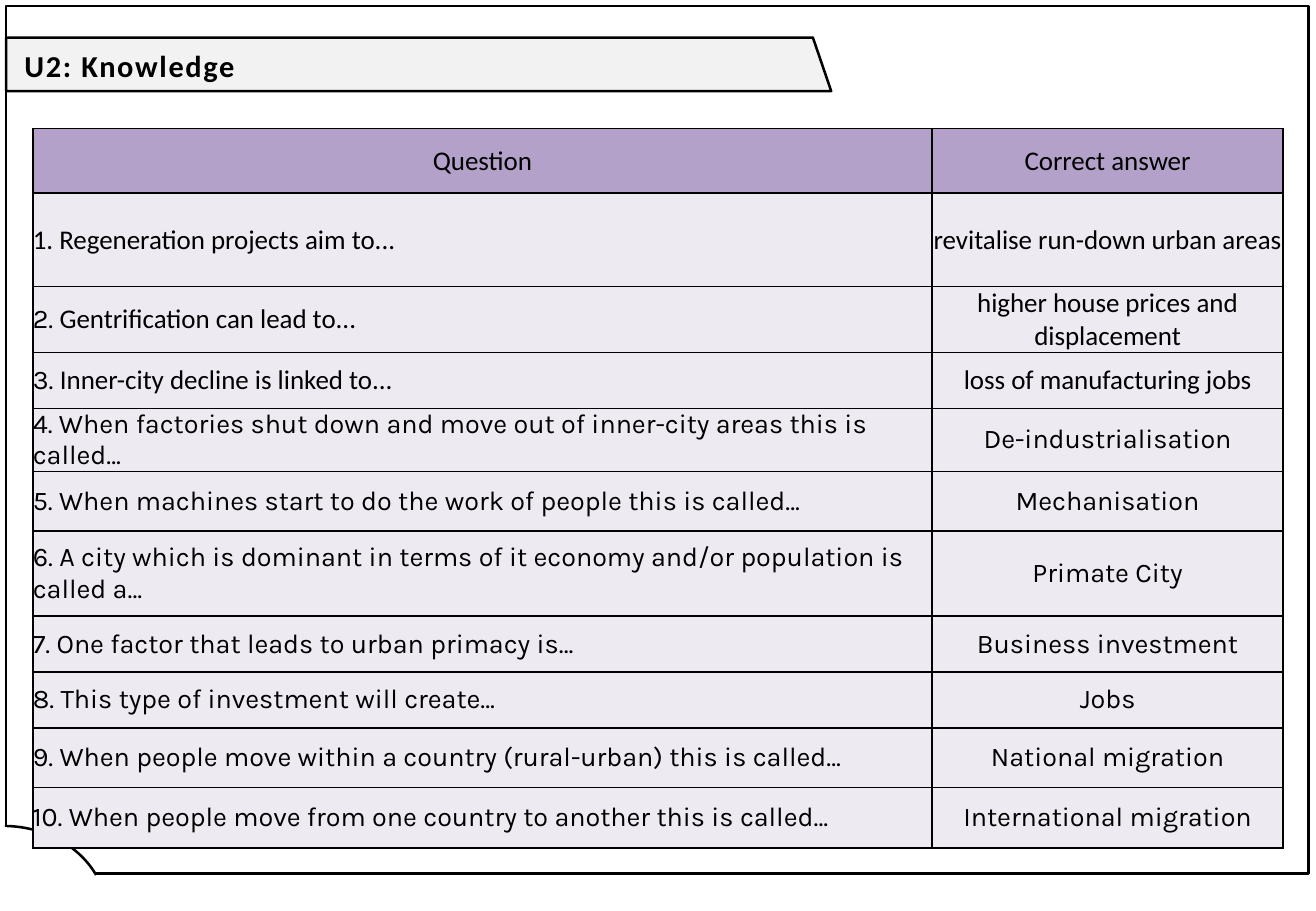
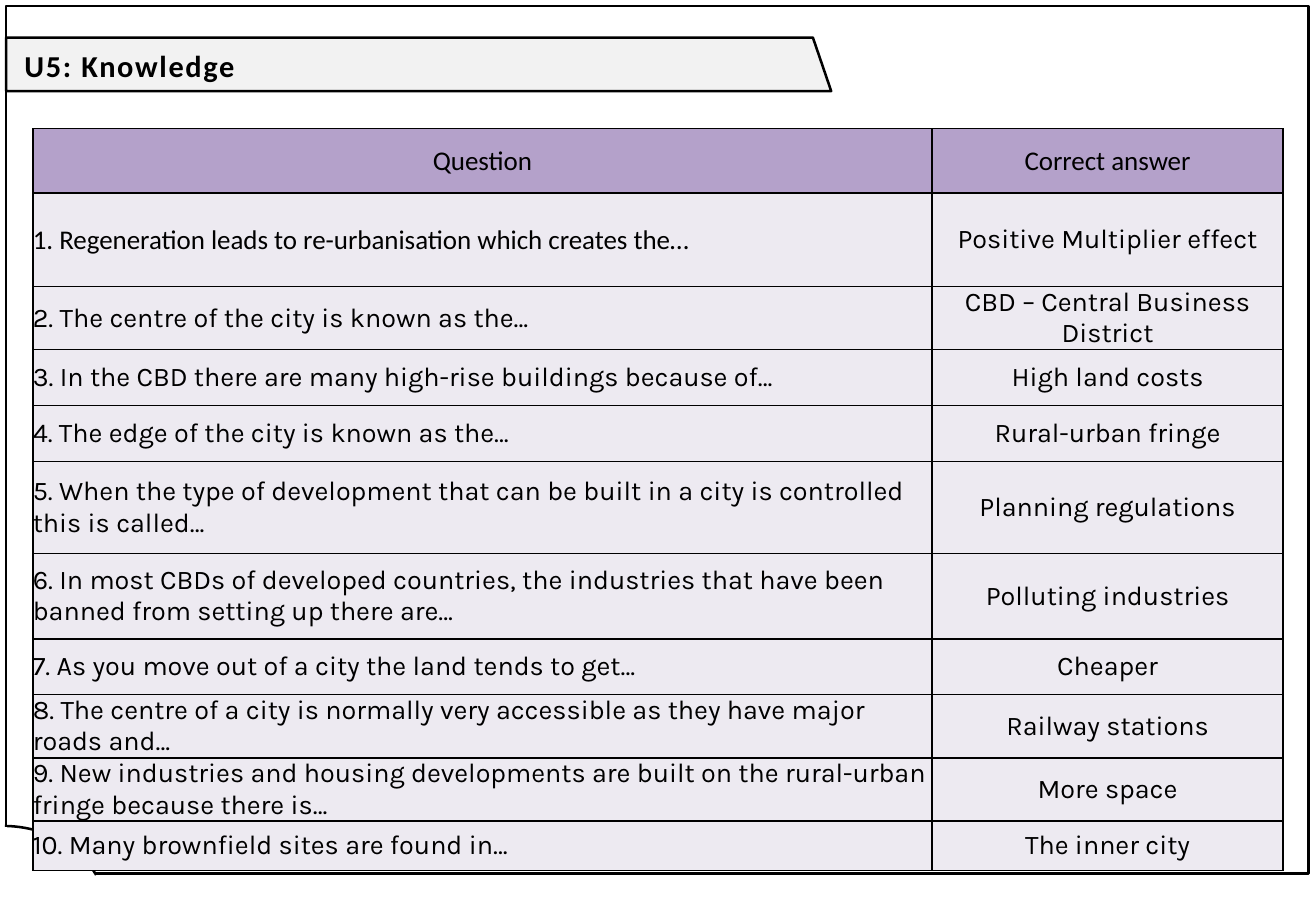
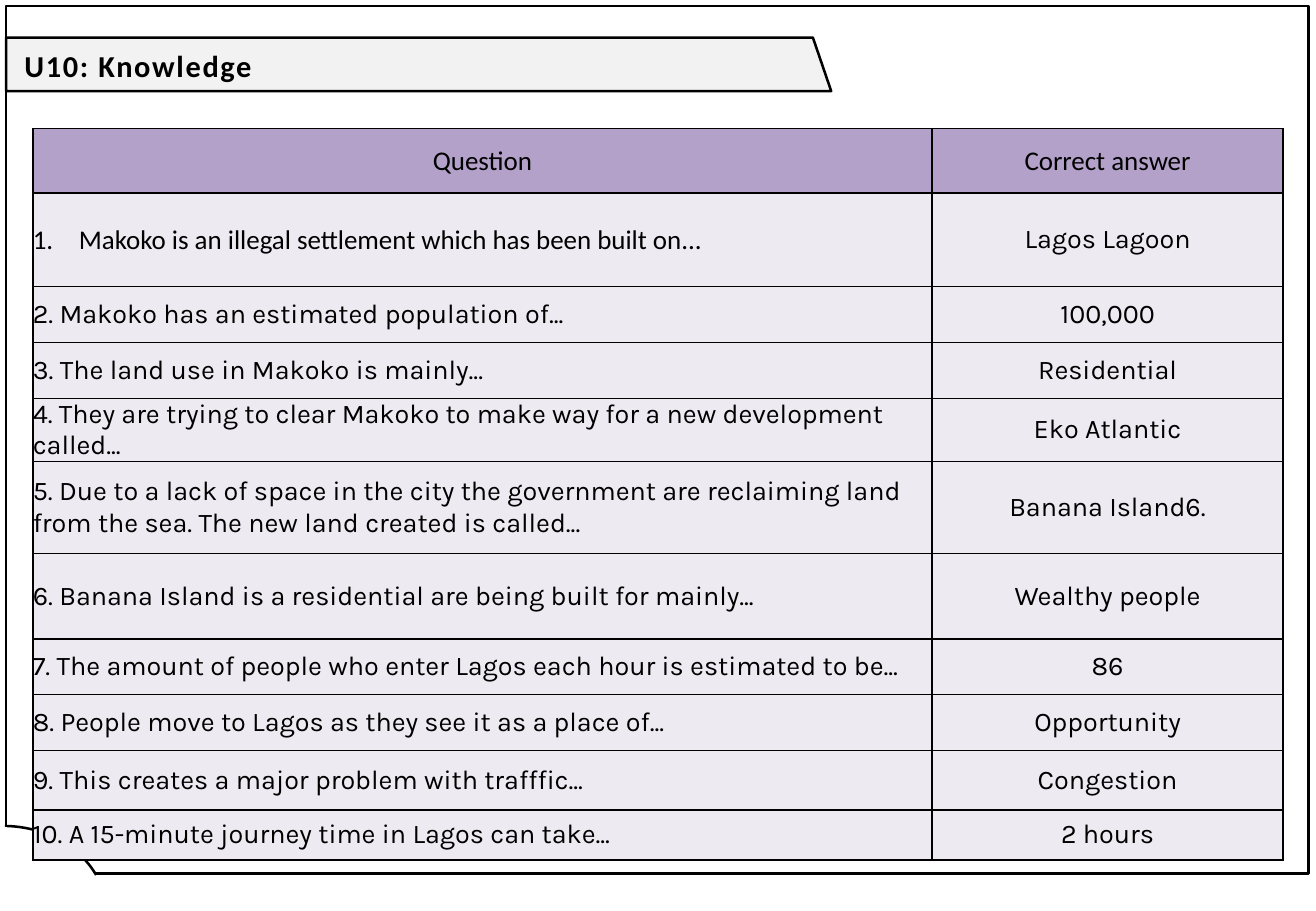
from dataclasses import dataclass

from pptx import Presentation
from pptx.dml.color import RGBColor
from pptx.enum.shapes import MSO_SHAPE as Preset
from pptx.enum.text import MSO_ANCHOR as Anchor, MSO_AUTO_SIZE as AutoSize, PP_ALIGN as Align
from pptx.oxml import parse_xml
from pptx.oxml.ns import nsdecls
from pptx.util import Pt

EMU_PER_PX = 9144  # 100 px to the inch
BLACK, WHITE = "000000", "FFFFFF"
BAND_GREY, HEADER_PURPLE, ROW_LILAC = "F2F2F2", "B4A1CA", "EDEAF1"
HEADING_FONT, BODY_FONT = "Calibri", "Karla"
COLUMN_WIDTHS = (740, 289)
ROWS_WITH_SHORT_FIFTH = (53, 77, 46, 46, 46, 49, 70, 46, 46, 49, 50)
ROWS_WITH_TALL_FIFTH = (53, 77, 46, 46, 46, 76, 70, 46, 46, 49, 41)


@dataclass
class Entry:
    """Cell text, with an optional lead-in set in the body font."""
    text: str
    font: str = BODY_FONT
    lead: str = ""
    numbered: bool = False


def heading(text, lead="", numbered=False):
    """Make a cell entry in the heading font."""
    return Entry(text, HEADING_FONT, lead, numbered)


HEADER = (heading("Question"), heading("Correct answer"))

REGENERATION = [
    (heading("1. Regeneration projects aim to..."), heading("revitalise run-down urban areas")),
    (heading("Gentrification can lead to...", lead="2. "),
     heading("higher house prices and displacement")),
    (heading("Inner-city decline is linked to...", lead="3. "),
     heading("loss of manufacturing jobs")),
    ("4. When factories shut down and move out of inner-city areas this is called…",
     "De-industrialisation"),
    ("5. When machines start to do the work of people this is called…", "Mechanisation"),
    ("6. A city which is dominant in terms of it economy and/or population is called a…",
     "Primate City"),
    ("7. One factor that leads to urban primacy is…", "Business investment"),
    ("8. This type of investment will create…", "Jobs"),
    ("9. When people move within a country (rural-urban) this is called…", "National migration"),
    ("10. When people move from one country to another this is called…",
     "International migration"),
]

LAND_USE = [
    (heading("1. Regeneration leads to re-urbanisation which creates the…"),
     "Positive Multiplier effect"),
    ("2. The centre of the city is known as the…", "CBD – Central Business District"),
    ("3. In the CBD there are many high-rise buildings because of…", "High land costs"),
    ("4. The edge of the city is known as the…", "Rural-urban fringe"),
    ("5. When the type of development that can be built in a city is controlled this is called…",
     "Planning regulations"),
    ("6. In most CBDs of developed countries, the industries that have been banned "
     "from setting up there are…", "Polluting industries"),
    ("7. As you move out of a city the land tends to get…", "Cheaper"),
    ("8. The centre of a city is normally very accessible as they have major roads and…",
     "Railway stations"),
    ("9. New industries and housing developments are built on the rural-urban fringe "
     "because there is…", "More space"),
    ("10. Many brownfield sites are found in…", "The inner city"),
]

LAGOS = [
    (heading("Makoko is an illegal settlement which has been built on...", numbered=True),
     "Lagos Lagoon"),
    ("2. Makoko has an estimated population of...", "100,000"),
    ("3. The land use in Makoko is mainly...", "Residential"),
    ("4. They are trying to clear Makoko to make way for a new development called...",
     "Eko Atlantic"),
    ("5. Due to a lack of space in the city the government are reclaiming land from the sea. "
     "The new land created is called...", "Banana Island6."),
    ("6. Banana Island is a residential are being built for mainly...", "Wealthy people"),
    ("7. The amount of people who enter Lagos each hour is estimated to be...", "86"),
    ("8. People move to Lagos as they see it as a place of...", "Opportunity"),
    ("9. This creates a major problem with trafffic...", "Congestion"),
    ("10. A 15-minute journey time in Lagos can take...", "2 hours"),
]

PAGES = [
    ("U2: Knowledge", ROWS_WITH_SHORT_FIFTH, REGENERATION),
    ("U5: Knowledge", ROWS_WITH_TALL_FIFTH, LAND_USE),
    ("U10: Knowledge", ROWS_WITH_TALL_FIFTH, LAGOS),
]


def px(*lengths):
    return [length * EMU_PER_PX for length in lengths]


def rgb(hex_colour):
    return RGBColor.from_string(hex_colour)


def style_shape(shape, fill=None, line=None):
    shape.shadow.inherit = False
    if fill:
        shape.fill.solid()
        shape.fill.fore_color.rgb = rgb(fill)
    else:
        shape.fill.background()
    if line:
        shape.line.color.rgb = rgb(line)
        shape.line.width = Pt(1.5)
    else:
        shape.line.fill.background()
    return shape


def style_font(font, name, size):
    font.name = name
    font.size = Pt(size)
    font.color.rgb = rgb(BLACK)


def prepare_layout(layout):
    """Keep only the title placeholder and place it on the title band."""
    for holder in list(layout.placeholders):
        if holder.placeholder_format.idx:
            holder.element.getparent().remove(holder.element)
    title = layout.placeholders[0]
    title.left, title.top, title.width, title.height = px(10, 21, 643, 63)


def draw_backdrop(page, layout):
    """Draw the band, frame and turned corner, then hand them to the layout."""
    outline = page.shapes.build_freeform(5, 31, scale=EMU_PER_PX)
    outline.add_line_segments([(669, 31), (684, 75), (5, 75)], close=True)
    band = style_shape(outline.convert_to_shape(), BAND_GREY, BLACK)
    frame = style_shape(page.shapes.add_shape(Preset.RECTANGLE, *px(5, 5, 1072, 714)), line=BLACK)
    corner = style_shape(page.shapes.add_shape(Preset.ARC, *px(-82, 680, 170, 145)), WHITE, BLACK)
    corner.adjustments[0], corner.adjustments[1] = 162.53, 202.27
    patch = style_shape(page.shapes.add_shape(Preset.RECTANGLE, *px(1, 681, 5, 10)), WHITE)
    for shape in (band, frame, corner, patch):
        layout.shapes.element.append(shape.element)


def set_title(page, text):
    frame = page.shapes.title.text_frame
    frame.text = text
    frame.word_wrap = True
    frame.auto_size = AutoSize.NONE
    frame.vertical_anchor = Anchor.MIDDLE
    para = frame.paragraphs[0]
    para.alignment = Align.LEFT
    para.line_spacing = 1.07
    para.space_before, para.space_after = Pt(0), Pt(8)
    span = para.runs[0]
    style_font(span.font, HEADING_FONT, 18)
    span.font.bold = True
    span.font._element.set("spc", "100")


def add_borders(cell):
    properties = cell._tc.get_or_add_tcPr()
    for side in "LRTB":
        properties.append(parse_xml(
            f'<a:ln{side} {nsdecls("a")} w="12700"><a:solidFill><a:srgbClr val="{BLACK}"/>'
            f'</a:solidFill></a:ln{side}>'))


def number_paragraph(para):
    properties = para._p.get_or_add_pPr()
    indent = px(38)[0]
    properties.set("marL", str(indent))
    properties.set("indent", str(-indent))
    properties.append(parse_xml(f'<a:buAutoNum {nsdecls("a")} type="arabicPeriod"/>'))


def fill_cell(cell, entry, colour, centred):
    add_borders(cell)
    cell.fill.solid()
    cell.fill.fore_color.rgb = rgb(colour)
    cell.margin_left = cell.margin_right = cell.margin_top = cell.margin_bottom = 0
    cell.vertical_anchor = Anchor.MIDDLE
    para = cell.text_frame.paragraphs[0]
    para.alignment = Align.CENTER if centred else Align.LEFT
    if entry.numbered:
        number_paragraph(para)
    if entry.lead:
        para.text = entry.lead
        style_font(para.runs[0].font, BODY_FONT, 16)
        para.add_run().text = entry.text
    else:
        para.text = entry.text
    style_font(para.runs[-1].font, entry.font, 16)


def add_quiz_table(page, row_heights, questions):
    rows = [HEADER, *questions]
    table = page.shapes.add_table(
        len(rows), len(COLUMN_WIDTHS),
        *px(27, 106, sum(COLUMN_WIDTHS), sum(row_heights))).table
    table.first_row = table.horz_banding = False
    for column, width in zip(table.columns, px(*COLUMN_WIDTHS)):
        column.width = width
    for row, height in zip(table.rows, px(*row_heights)):
        row.height = height
    for row_index, entries in enumerate(rows):
        is_header = row_index == 0
        for column_index, entry in enumerate(entries):
            if isinstance(entry, str):
                entry = Entry(entry)
            fill_cell(table.cell(row_index, column_index), entry,
                      HEADER_PURPLE if is_header else ROW_LILAC,
                      centred=is_header or column_index == 1)


def main():
    deck = Presentation()
    deck.slide_width, deck.slide_height = px(1083, 750)
    layout = deck.slide_layouts.get_by_name("Title Only")
    prepare_layout(layout)
    for index, (title, row_heights, questions) in enumerate(PAGES):
        page = deck.slides.add_slide(layout)
        if index == 0:
            draw_backdrop(page, layout)
        set_title(page, title)
        add_quiz_table(page, row_heights, questions)
    deck.save("out.pptx")


if __name__ == "__main__":
    main()
